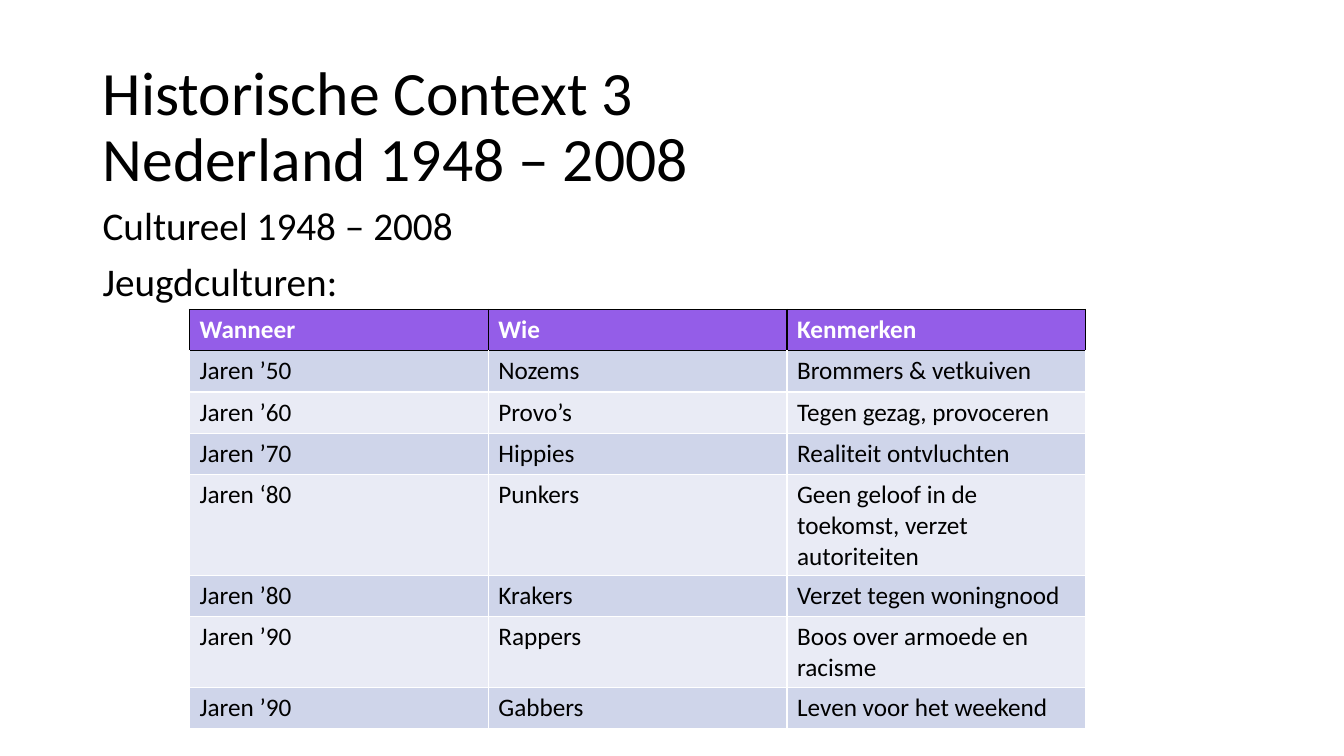
import pptx
import pptx.util
import pptx.dml.color
import pptx.enum.text
import pptx.oxml
import pptx.oxml.ns

Inches, Pt = pptx.util.Inches, pptx.util.Pt
Color = pptx.dml.color.RGBColor
BLACK = Color(0x00, 0x00, 0x00)
WHITE = Color(0xFF, 0xFF, 0xFF)
PURPLE = Color(0x94, 0x5D, 0xE8)
BANDS = [Color(0xE9, 0xEB, 0xF5), Color(0xCF, 0xD5, 0xEA)]
FONT = "Calibri"


def add_text(top, height, lines, size, anchor):
    box = slide.shapes.add_textbox(Inches(0.92), Inches(top), Inches(11.5), Inches(height))
    frame = box.text_frame
    frame.word_wrap = True
    frame.vertical_anchor = anchor
    frame.text = lines
    for i, para in enumerate(frame.paragraphs):
        para.line_spacing = 0.9
        if i:
            para.space_before = Pt(10)
        para.font.size = Pt(size)
        para.font.name = FONT
        para.font.color.rgb = BLACK


def add_border(cell, side, color):
    line = pptx.oxml.parse_xml(
        f'<a:ln{side} {pptx.oxml.ns.nsdecls("a")} w="12700"><a:solidFill>'
        f'<a:srgbClr val="{color}"/></a:solidFill></a:ln{side}>')
    cell._tc.get_or_add_tcPr().append(line)


deck = pptx.Presentation()
deck.slide_width, deck.slide_height = Inches(13.33), Inches(7.5)
slide = deck.slides.add_slide(deck.slide_layouts[6])

# Title and subheadings
anchors = pptx.enum.text.MSO_ANCHOR
add_text(0.55, 1.45, "Historische Context 3\vNederland 1948 – 2008", 44, anchors.MIDDLE)
add_text(2, 4.76, "Cultureel 1948 – 2008\nJeugdculturen:", 28, anchors.TOP)

# Table of youth cultures
rows = [
    ("Wanneer", "Wie", "Kenmerken"),
    ("Jaren ’50", "Nozems", "Brommers & vetkuiven"),
    ("Jaren ’60", "Provo’s", "Tegen gezag, provoceren"),
    ("Jaren ’70", "Hippies", "Realiteit ontvluchten"),
    ("Jaren ‘80", "Punkers", "Geen geloof in de toekomst, verzet autoriteiten"),
    ("Jaren ’80", "Krakers", "Verzet tegen woningnood"),
    ("Jaren ’90", "Rappers", "Boos over armoede en racisme"),
    ("Jaren ’90", "Gabbers", "Leven voor het weekend"),
]
table = slide.shapes.add_table(len(rows), 3, Inches(1.88), Inches(3.07),
                               Inches(8.89), Inches(0.41 * len(rows))).table
for r, row in enumerate(rows):
    head = r == 0
    for c, text in enumerate(row):
        cell = table.cell(r, c)
        cell.text = text
        font = cell.text_frame.paragraphs[0].font
        font.size = Pt(18)
        font.name = FONT
        font.bold = head
        font.color.rgb = WHITE if head else BLACK
        for side in "LRTB":
            dark = head or (r == 1 and side == "T")
            add_border(cell, side, BLACK if dark else WHITE)
        cell.fill.solid()
        cell.fill.fore_color.rgb = PURPLE if head else BANDS[r % 2]

deck.save("out.pptx")
